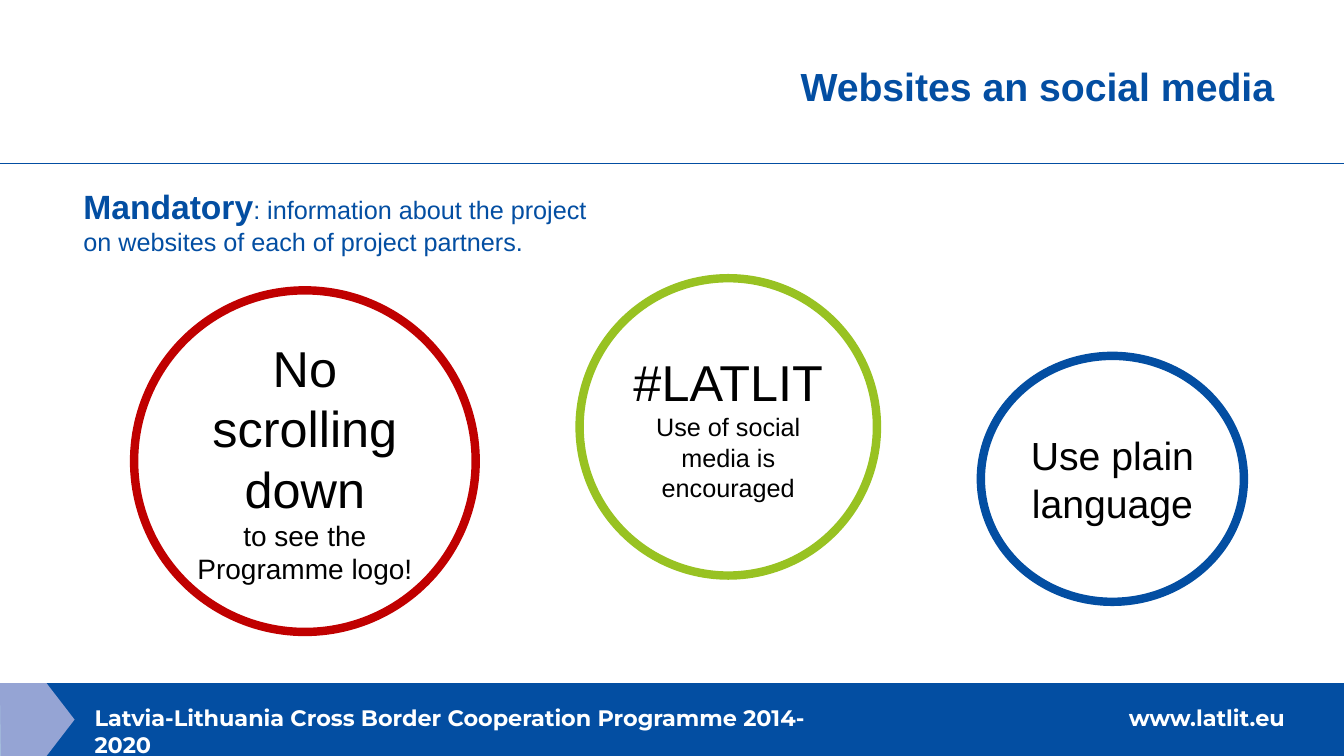
from dataclasses import dataclass

import pptx
import pptx.dml.color
import pptx.enum.shapes
import pptx.enum.text
import pptx.oxml.ns
import pptx.util
from lxml import etree

Pt = pptx.util.Pt
Color = pptx.dml.color.RGBColor
Align = pptx.enum.text.PP_ALIGN
Anchor = pptx.enum.text.MSO_ANCHOR
ShapeType = pptx.enum.shapes.MSO_SHAPE


@dataclass(frozen=True)
class Theme:
    blue: Color = Color(0x03, 0x4E, 0xA2)
    lilac: Color = Color(0x95, 0xA4, 0xD4)
    green: Color = Color(0x98, 0xC2, 0x22)
    red: Color = Color(0xC0, 0x00, 0x00)
    black: Color = Color(0, 0, 0)
    white: Color = Color(0xFF, 0xFF, 0xFF)
    body_font: str = "Arial"
    footer_font: str = "Montserrat"
    hero: float = 36
    heading: float = 28
    lead: float = 24
    note: float = 20
    body: float = 18
    footer: float = 16
    ring_width: float = 6
    rule_width: float = 0.5


THEME = Theme()


@dataclass(frozen=True)
class Box:
    left: float
    top: float
    width: float
    height: float

    def lengths(self) -> tuple:
        return Pt(self.left), Pt(self.top), Pt(self.width), Pt(self.height)


@dataclass(frozen=True)
class Span:
    text: str
    size: float
    bold: bool = False


@dataclass(frozen=True)
class Label:
    box: Box
    spans: tuple[Span, ...]
    color: Color = THEME.blue
    font: str = THEME.body_font
    align: Align = Align.LEFT


@dataclass(frozen=True)
class Ring:
    box: Box
    color: Color
    lines: tuple[Span, ...]


LABELS = (
    Label(Box(60.5, 499.7, 556.5, 26.6),
          (Span("Latvia-Lithuania Cross Border Cooperation Programme 2014-2020", THEME.footer, True),),
          THEME.white, THEME.footer_font),
    Label(Box(799.2, 499.7, 127, 26.6), (Span("www.latlit.eu", THEME.footer, True),),
          THEME.white, THEME.footer_font),
    Label(Box(336.2, 41, 581, 41), (Span("Websites an social media", THEME.heading, True),),
          align=Align.RIGHT),
    Label(Box(52.5, 129, 391, 58.3),
          (Span("Mandatory", THEME.lead, True),
           Span(": information about the project on websites of each of project partners.", THEME.body))),
)

RINGS = (
    Ring(Box(414, 198.7, 212.4, 212.4), THEME.green,
         (Span("#LATLIT", THEME.hero), Span("Use of social media is encouraged", THEME.body))),
    Ring(Box(700.6, 254.2, 187.9, 175.7), THEME.blue,
         (Span("Use plain language", THEME.heading),)),
    Ring(Box(95.8, 207.4, 244, 244), THEME.red,
         (Span("No\vscrolling down", THEME.hero), Span("to see the Programme logo!", THEME.note))),
)


def format_run(run, span: Span, color: Color, font: str) -> None:
    run.font.name = font
    run.font.size = Pt(span.size)
    run.font.bold = span.bold
    run.font.color.rgb = color


def fill_plain(shape, color: Color) -> None:
    shape.shadow.inherit = False
    shape.fill.solid()
    shape.fill.fore_color.rgb = color
    shape.line.fill.background()


def draw_rule(slide, top: float, width: float) -> None:
    rule = slide.shapes.add_connector(
        pptx.enum.shapes.MSO_CONNECTOR.STRAIGHT, Pt(0), Pt(top), Pt(width), Pt(top))
    rule.line.color.rgb = THEME.blue
    rule.line.width = Pt(THEME.rule_width)
    etree.SubElement(rule._element.spPr, pptx.oxml.ns.qn("a:effectLst"))


def draw_footer_band(slide) -> None:
    band = slide.shapes.add_shape(ShapeType.RECTANGLE, *Box(0.5, 488, 959.5, 52).lengths())
    fill_plain(band, THEME.blue)
    builder = slide.shapes.build_freeform(Pt(0), Pt(488))
    corners = ((33.3, 488), (53.3, 514), (33.3, 540), (0.7, 540))
    builder.add_line_segments([(Pt(x), Pt(y)) for x, y in corners], close=True)
    fill_plain(builder.convert_to_shape(), THEME.lilac)


def draw_label(slide, label: Label) -> None:
    text_frame = slide.shapes.add_textbox(*label.box.lengths()).text_frame
    text_frame.word_wrap = True
    paragraph = text_frame.paragraphs[0]
    paragraph.alignment = label.align
    for span in label.spans:
        run = paragraph.add_run()
        run.text = span.text
        format_run(run, span, label.color, label.font)


def draw_ring(slide, ring: Ring) -> None:
    shape = slide.shapes.add_shape(ShapeType.OVAL, *ring.box.lengths())
    shape.shadow.inherit = False
    shape.fill.background()
    shape.line.color.rgb = ring.color
    shape.line.width = Pt(THEME.ring_width)
    text_frame = shape.text_frame
    text_frame.word_wrap = True
    text_frame.vertical_anchor = Anchor.MIDDLE
    for index, span in enumerate(ring.lines):
        paragraph = text_frame.add_paragraph() if index else text_frame.paragraphs[0]
        paragraph.text = span.text
        paragraph.alignment = Align.CENTER
        for run in paragraph.runs:
            format_run(run, span, THEME.black, THEME.body_font)


def main() -> None:
    presentation = pptx.Presentation()
    presentation.slide_width, presentation.slide_height = Pt(960), Pt(540)
    slide = presentation.slides.add_slide(presentation.slide_layouts[6])

    # Header rule and footer band
    draw_rule(slide, 116.5, 960)
    draw_footer_band(slide)

    # Footer, title and lead text
    for label in LABELS:
        draw_label(slide, label)

    # Three messages in rings
    for ring in RINGS:
        draw_ring(slide, ring)

    presentation.save("out.pptx")


if __name__ == "__main__":
    main()
